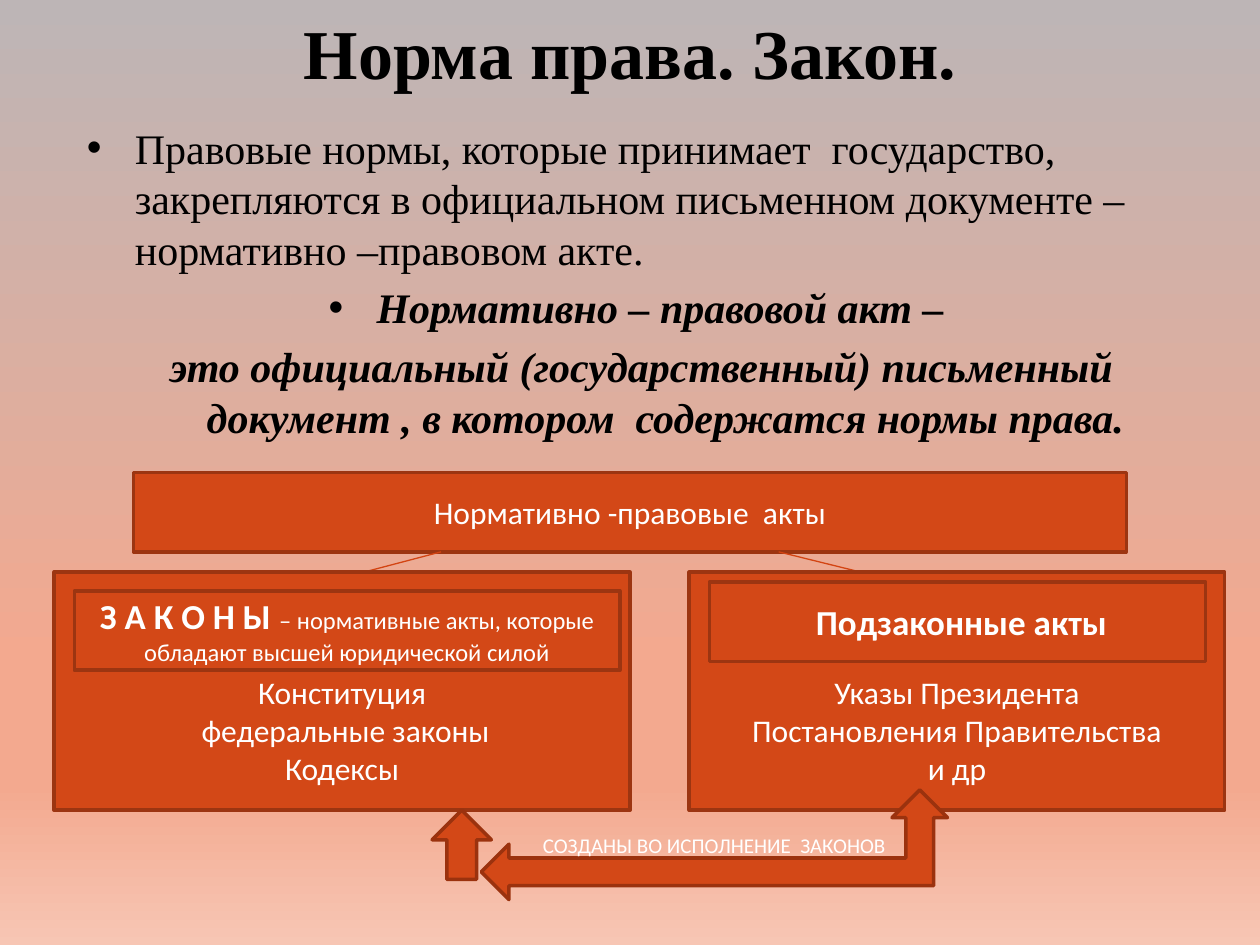
import pptx
import pptx.dml.color
import pptx.enum.shapes
import pptx.enum.text
import pptx.oxml.ns
import pptx.oxml.xmlchemy
import pptx.util
from pptx.util import Inches

RGBColor = pptx.dml.color.RGBColor
ALIGN = pptx.enum.text.PP_ALIGN
ANCHOR = pptx.enum.text.MSO_ANCHOR
SHAPE = pptx.enum.shapes.MSO_SHAPE
qn = pptx.oxml.ns.qn
new_element = pptx.oxml.xmlchemy.OxmlElement

BLACK = RGBColor(0x00, 0x00, 0x00)
WHITE = RGBColor(0xFF, 0xFF, 0xFF)
ORANGE = RGBColor(0xD3, 0x48, 0x17)
BOX_EDGE = RGBColor(0x9C, 0x35, 0x11)
ARROW_EDGE = RGBColor(0x9B, 0x32, 0x0E)
LINK = RGBColor(0xD3, 0x44, 0x12)
BACKGROUND_STOPS = [
    (0, RGBColor(0xBD, 0xB5, 0xB6)),
    (70, RGBColor(0xF3, 0xA9, 0x8F)),
    (83, RGBColor(0xF3, 0xA9, 0x8F)),
    (100, RGBColor(0xF7, 0xC6, 0xB4)),
]
SERIF = "Times New Roman"
SANS = "Calibri"


def set_font(font, name, size, color, bold=False, italic=False):
    font.name, font.size = name, pptx.util.Pt(size)
    font.color.rgb = color
    font.bold, font.italic = bold, italic


def place(shape, box):
    shape.left, shape.top, shape.width, shape.height = map(Inches, box)


def add_background(slide):
    fill = slide.background.fill
    fill.gradient()
    fill.gradient_angle = 270
    stops = slide.element.find(".//" + qn("a:gsLst"))
    for stop in list(stops):
        stops.remove(stop)
    for percent, color in BACKGROUND_STOPS:
        stop = new_element("a:gs")
        stop.set("pos", str(percent * 1000))
        value = new_element("a:srgbClr")
        value.set("val", str(color))
        stop.append(value)
        stops.append(stop)


def add_title(slide, box):
    title = slide.shapes.title
    place(title, box)
    frame = title.text_frame
    frame.text = "Норма права. Закон."
    frame.vertical_anchor = ANCHOR.MIDDLE
    frame.auto_size = pptx.enum.text.MSO_AUTO_SIZE.NONE
    frame.paragraphs[0].alignment = ALIGN.CENTER
    set_font(frame.paragraphs[0].font, SERIF, 40, BLACK, bold=True)


def set_bullet(paragraph, shown):
    properties = paragraph._p.get_or_add_pPr()
    properties.set("marL", str(Inches(0.38)))
    properties.set("indent", str(-Inches(0.38)))
    bullet = new_element("a:buChar" if shown else "a:buNone")
    if shown:
        bullet.set("char", "•")
    properties.insert_element_before(bullet, "a:tabLst", "a:defRPr", "a:extLst")


def add_definition(slide, box):
    body = slide.placeholders[1]
    place(body, box)
    frame = body.text_frame
    frame.auto_size = pptx.enum.text.MSO_AUTO_SIZE.NONE
    items = [
        ("Правовые нормы, которые принимает  государство, закрепляются в официальном "
         "письменном документе – нормативно –правовом акте.", True, False),
        ("Нормативно – правовой акт – ", True, True),
        ("это официальный (государственный) письменный документ , в котором  "
         "содержатся нормы права.", False, True),
    ]
    frame.text = "\n".join(text for text, _, _ in items)
    for paragraph, (_, bulleted, emphasized) in zip(frame.paragraphs, items):
        paragraph.alignment = ALIGN.CENTER if emphasized else ALIGN.LEFT
        set_font(paragraph.font, SERIF, 24, BLACK, emphasized, emphasized)
        set_bullet(paragraph, bulleted)


def style_shape(shape, edge):
    shape.shadow.inherit = False
    shape.fill.solid()
    shape.fill.fore_color.rgb = ORANGE
    shape.line.color.rgb = edge
    shape.line.width = pptx.util.Pt(2)


def set_text(shape, text, size, bold=False):
    frame = shape.text_frame
    frame.word_wrap = True
    frame.vertical_anchor = ANCHOR.MIDDLE
    frame.text = text
    for paragraph in frame.paragraphs:
        paragraph.alignment = ALIGN.CENTER
        set_font(paragraph.font, SANS, size, WHITE, bold)


def add_box(slide, box, text, size=18, bold=False):
    shape = slide.shapes.add_shape(SHAPE.RECTANGLE, *map(Inches, box))
    style_shape(shape, BOX_EDGE)
    set_text(shape, text, size, bold)
    return shape


def add_link(slide, start, end):
    link = slide.shapes.add_connector(
        pptx.enum.shapes.MSO_CONNECTOR.STRAIGHT, *map(Inches, start + end))
    link.line.color.rgb = LINK
    link.line.width = pptx.util.Pt(0.75)
    tail = new_element("a:tailEnd")
    tail.set("type", "arrow")
    properties = link._element.spPr
    properties.find(qn("a:ln")).append(tail)
    properties.append(new_element("a:effectLst"))


def add_panel(slide, box, text):
    """Add a box whose text stays below the heading laid over its top."""
    panel = add_box(slide, box, text)
    panel.text_frame.margin_top = Inches(0.66)


def add_laws_heading(slide, box):
    heading = add_box(slide, box, "З А К О Н Ы ", 20, bold=True)
    run = heading.text_frame.paragraphs[0].add_run()
    run.text = "– нормативные акты, которые обладают высшей юридической силой"
    set_font(run.font, SANS, 14, WHITE)


def add_bent_arrow(slide, box):
    """Add a double-headed arrow from the left edge, turning up at the right."""
    left, top, width, height = map(Inches, box)
    right, bottom = left + width, top + height
    head, half_shaft = Inches(0.22), Inches(0.11)
    axis_x, axis_y = right - head, bottom - head
    points = [
        (left, axis_y),
        (left + head, axis_y - head),
        (left + head, axis_y - half_shaft),
        (axis_x - half_shaft, axis_y - half_shaft),
        (axis_x - half_shaft, top + head),
        (axis_x - head, top + head),
        (axis_x, top),
        (right, top + head),
        (axis_x + half_shaft, top + head),
        (axis_x + half_shaft, axis_y + half_shaft),
        (left + head, axis_y + half_shaft),
        (left + head, bottom),
    ]
    builder = slide.shapes.build_freeform(*points[0])
    builder.add_line_segments(points[1:], close=True)
    arrow = builder.convert_to_shape()
    style_shape(arrow, ARROW_EDGE)
    set_text(arrow, "СОЗДАНЫ ВО ИСПОЛНЕНИЕ  ЗАКОНОВ", 12)


def add_up_arrow(slide, box):
    arrow = slide.shapes.add_shape(SHAPE.UP_ARROW, *map(Inches, box))
    style_shape(arrow, ARROW_EDGE)


def main():
    presentation = pptx.Presentation()
    presentation.slide_width, presentation.slide_height = Inches(10), Inches(7.5)
    slide = presentation.slides.add_slide(presentation.slide_layouts[1])
    add_background(slide)
    add_title(slide, (0.5, 0.05, 9, 0.71))
    add_definition(slide, (0.59, 0.92, 9, 5.97))
    add_box(slide, (1.06, 3.75, 7.88, 0.63), "Нормативно -правовые  акты")
    add_link(slide, (3.5, 4.38), (2.32, 4.69))
    add_link(slide, (6.18, 4.38), (7.76, 4.77))
    add_panel(slide, (0.43, 4.54, 4.57, 1.89),
              "Конституция\n федеральные законы\nКодексы")
    add_panel(slide, (5.47, 4.54, 4.25, 1.89),
              "Указы Президента\nПостановления Правительства\nи др")
    add_laws_heading(slide, (0.59, 4.69, 4.33, 0.63))
    add_box(slide, (5.63, 4.62, 3.94, 0.63), " Подзаконные акты", 20, bold=True)
    add_bent_arrow(slide, (3.82, 6.27, 3.7, 0.87))
    add_up_arrow(slide, (3.43, 6.43, 0.47, 0.55))
    presentation.save("out.pptx")


if __name__ == "__main__":
    main()
